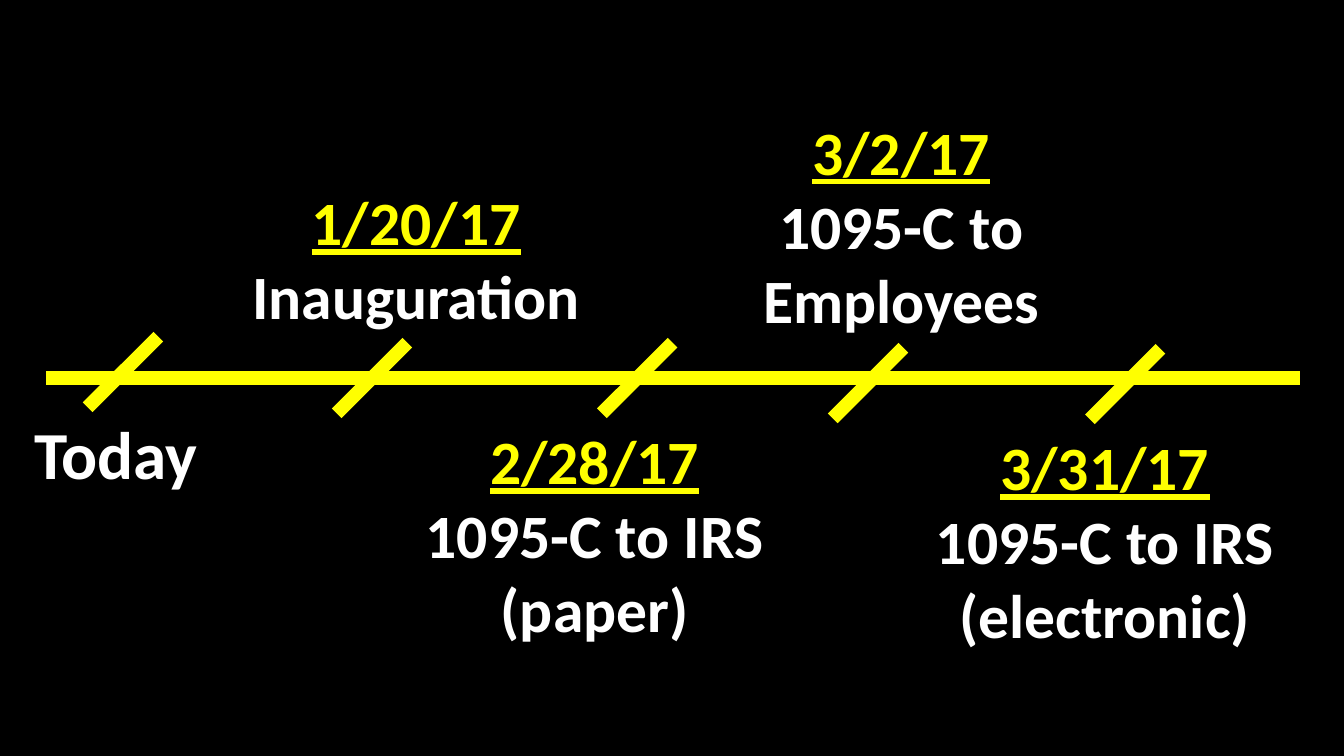
from lxml import etree
from pptx import Presentation
from pptx import util as u
from pptx.dml.color import RGBColor
from pptx.enum import shapes, text
from pptx.oxml.ns import qn

BLACK, WHITE, YELLOW = "000000", "FFFFFF", "FFFF00"
TICK_SIZE = 0.7

# Left and top of each tick mark
TICKS = [(0.87, 3.34), (3.34, 3.4), (5.97, 3.4), (8.26, 3.45), (10.81, 3.46)]

# Box (left, top, width, height), date and description lines
EVENTS = [
    ((2.36, 1.78, 3.54, 1.58), "1/20/17", ["Inauguration"]),
    ((7.17, 1.08, 3.54, 2.32), "3/2/17", ["1095-C to Employees"]),
    ((3.9, 4.15, 4, 2.32), "2/28/17", ["1095-C to IRS", "(paper)"]),
    ((8.96, 4.21, 4, 2.32), "3/31/17", ["1095-C to IRS", "(electronic)"]),
]


def color(value):
    return RGBColor.from_string(value)


def add_line(slide, start, end):
    line = slide.shapes.add_connector(
        shapes.MSO_CONNECTOR.STRAIGHT, *map(u.Inches, (*start, *end)))
    line.line.color.rgb = color(YELLOW)
    line.line.width = u.Pt(9.75)
    etree.SubElement(line.element.spPr, qn("a:effectLst"))


def add_text_box(slide, box):
    shape = slide.shapes.add_textbox(*map(u.Inches, box))
    frame = shape.text_frame
    frame.word_wrap = True
    frame.auto_size = text.MSO_AUTO_SIZE.SHAPE_TO_FIT_TEXT
    return frame


def write(paragraph, words, size=44, fill=WHITE, underline=False,
          align=text.PP_ALIGN.CENTER):
    paragraph.alignment = align
    run = paragraph.add_run()
    run.text = words
    font = run.font
    font.name, font.size = "Calibri", u.Pt(size)
    font.bold, font.underline = True, underline
    font.color.rgb = color(fill)


def add_axis(slide, left, top, width):
    add_line(slide, (left, top), (left + width, top))
    for tick_left, tick_top in TICKS:
        add_line(slide, (tick_left + TICK_SIZE, tick_top),
                 (tick_left, tick_top + TICK_SIZE))


def add_today(slide, box):
    frame = add_text_box(slide, box)
    write(frame.paragraphs[0], "Today", size=48, align=text.PP_ALIGN.LEFT)


def add_event(slide, box, date, description):
    frame = add_text_box(slide, box)
    write(frame.paragraphs[0], date, fill=YELLOW, underline=True)
    for words in description:
        write(frame.add_paragraph(), words)


def add_timeline_slide(presentation):
    slide = presentation.slides.add_slide(presentation.slide_layouts[6])
    slide.background.fill.solid()
    slide.background.fill.fore_color.rgb = color(BLACK)

    # Axis with tick marks
    add_axis(slide, 0.46, 3.75, 12.43)

    # Labels
    add_today(slide, (0.24, 4.04, 1.84, 0.91))
    for event in EVENTS:
        add_event(slide, *event)


def main():
    presentation = Presentation()
    presentation.slide_width = u.Inches(13.33)
    presentation.slide_height = u.Inches(7.5)
    add_timeline_slide(presentation)
    presentation.save("out.pptx")


if __name__ == "__main__":
    main()
